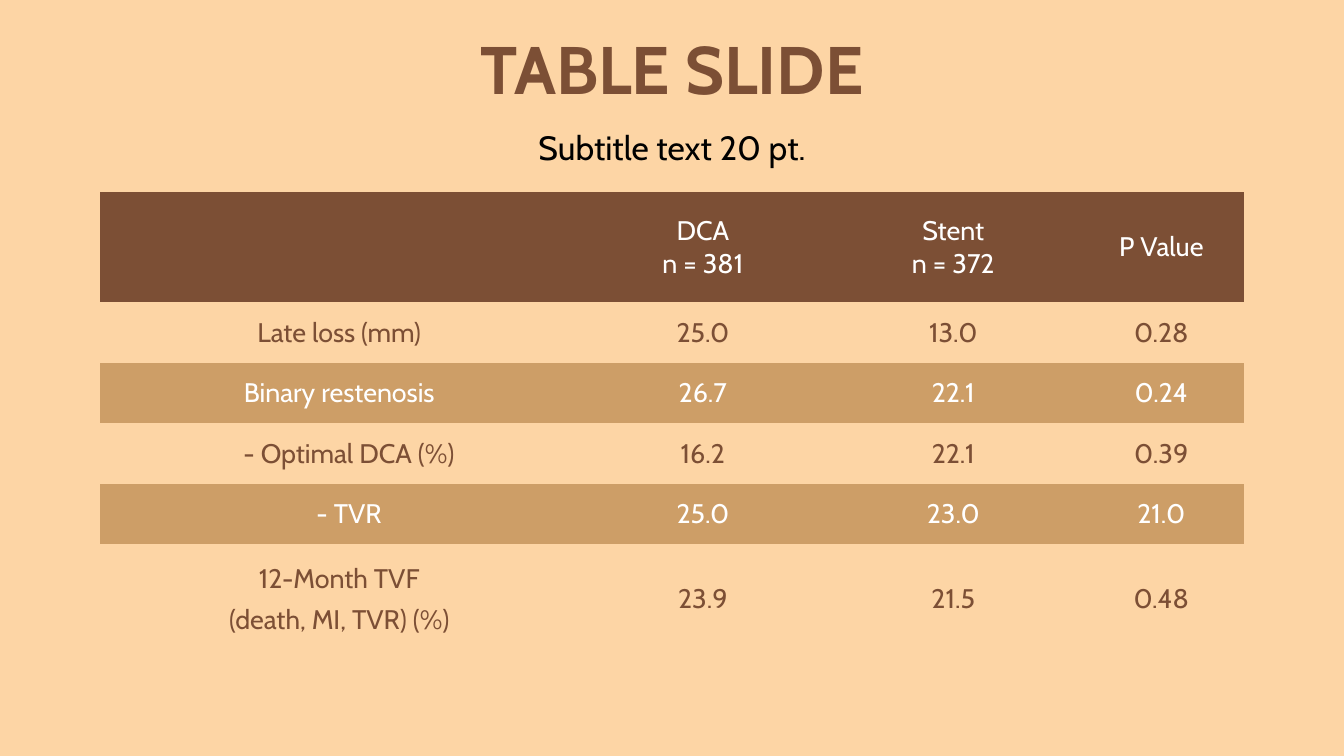
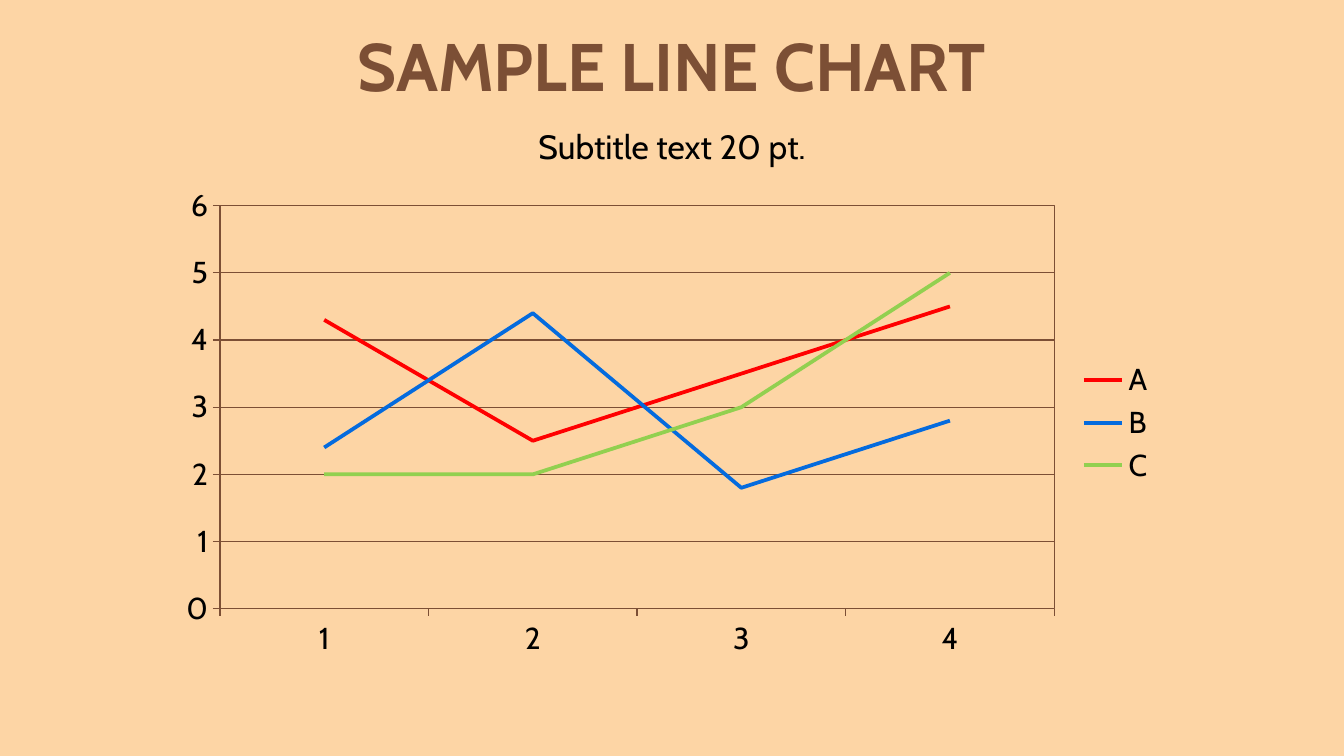
"""Builds a table slide and a line chart slide that share one warm brown style."""
from lxml import etree
from pptx import Presentation
from pptx.chart.data import CategoryChartData
from pptx.dml.color import RGBColor
from pptx.enum.chart import XL_CHART_TYPE as ChartType, XL_LEGEND_POSITION as LegendPosition
from pptx.enum.chart import XL_MARKER_STYLE as Marker, XL_TICK_MARK as Tick
from pptx.enum.text import MSO_ANCHOR as Anchor, PP_ALIGN as Align
from pptx.oxml import parse_xml
from pptx.oxml.ns import nsdecls, qn
from pptx.util import Inches, Pt

FONT = "Cabin"
SAND = RGBColor(0xFD, 0xD5, 0xA5)
BROWN = RGBColor(0x7C, 0x4F, 0x35)
TAN = RGBColor(0xCD, 0x9E, 0x67)
BLACK = RGBColor(0, 0, 0)
WHITE = RGBColor(0xFF, 0xFF, 0xFF)
RED = RGBColor(0xFF, 0, 0)
BLUE = RGBColor(0x04, 0x6B, 0xDE)
GREEN = RGBColor(0x92, 0xD0, 0x50)

SUBTITLE = "Subtitle text 20 pt."
HEADER = ("", "DCA\vn = 381", "Stent\vn = 372", "P Value")
ROWS = [
    ("Late loss (mm)", "25.0", "13.0", "0.28"),
    ("Binary restenosis", "26.7", "22.1", "0.24"),
    ("- Optimal DCA (%)", "16.2", "22.1", "0.39"),
    ("- TVR", "25.0", "23.0", "21.0"),
    ("12-Month TVF\n(death, MI, TVR) (%)", "23.9", "21.5", "0.48"),
]
COLUMN_WIDTHS = (3.95, 2.06, 2.08, 1.36)
ROW_HEIGHT, TALL_ROW_HEIGHT = 0.5, 0.91
NO_STYLE = "{2D5ABB26-0587-4C30-8999-92F81FD0307C}"

CATEGORIES = ("1", "2", "3", "4")
SERIES = [
    ("A", (4.3, 2.5, 3.5, 4.5), RED),
    ("B", (2.4, 4.4, 1.8, 2.8), BLUE),
    ("C", (2, 2, 3, 5), GREEN),
]
PLOT_LAYOUT = {"x": 0.053, "y": 0.057, "w": 0.834, "h": 0.823}


def style_font(font, size, color, bold=False):
    font.name, font.size, font.bold = FONT, Pt(size), bold
    font.color.rgb = color


def style_text(frame, size, color, bold=False, line_spacing=None, gap=0):
    for index, para in enumerate(frame.paragraphs):
        para.alignment = Align.CENTER
        para.line_spacing = line_spacing
        if index:
            para.space_before = Pt(gap)
        style_font(para.font, size, color, bold)
        for span in para.runs:
            style_font(span.font, size, color, bold)


def place(shape, left, top, width, height):
    shape.left, shape.top = Inches(left), Inches(top)
    shape.width, shape.height = Inches(width), Inches(height)


def add_titled_slide(deck, title, title_box, subtitle_box):
    slide = deck.slides.add_slide(deck.slide_layouts[5])
    heading = slide.shapes.title
    place(heading, *title_box)
    frame = heading.text_frame
    frame.text = title
    frame.margin_left = frame.margin_right = Inches(0.05)
    frame.vertical_anchor = Anchor.MIDDLE
    style_text(frame, 40, BROWN, True, 0.9)

    subtitle = slide.shapes.add_textbox(*map(Inches, subtitle_box))
    frame = subtitle.text_frame
    frame.word_wrap = True
    frame.text = SUBTITLE
    frame.vertical_anchor = Anchor.MIDDLE
    style_text(frame, 20, BLACK, line_spacing=0.9)
    return slide


def fill_cell(cell, text, fill, color):
    cell.text_frame.text = text
    cell.vertical_anchor = Anchor.MIDDLE
    if text.startswith("- "):
        cell.margin_left = Inches(0.26)
    if fill is None:
        cell.fill.background()
    else:
        cell.fill.solid()
        cell.fill.fore_color.rgb = fill
    style_text(cell.text_frame, 16, color, gap=4.8)


def add_results_table(slide):
    rows = [HEADER, *ROWS]
    heights = [TALL_ROW_HEIGHT, *[ROW_HEIGHT] * (len(rows) - 2), TALL_ROW_HEIGHT]
    frame = slide.shapes.add_table(
        len(rows), len(HEADER), Inches(0.83), Inches(1.59),
        Inches(sum(COLUMN_WIDTHS)), Inches(sum(heights)))
    table = frame.table
    table._tbl.tblPr.find(qn("a:tableStyleId")).text = NO_STYLE
    for column, width in zip(table.columns, COLUMN_WIDTHS):
        column.width = Inches(width)
    for index, (values, height) in enumerate(zip(rows, heights)):
        table.rows[index].height = Inches(height)
        if index == 0:
            fill, color = BROWN, WHITE
        elif index % 2:
            fill, color = None, BROWN
        else:
            fill, color = TAN, WHITE
        for cell, text in zip(table.rows[index].cells, values):
            fill_cell(cell, text, fill, color)


def style_line(line, color, width):
    line.color.rgb = color
    line.width = Pt(width)


def frame_plot_area(chart):
    plot_area = chart._chartSpace.find(f".//{qn('c:plotArea')}")
    for old in plot_area.findall(qn("c:layout")):
        plot_area.remove(old)
    layout = parse_xml(f"<c:layout {nsdecls('c')}><c:manualLayout/></c:layout>")
    settings = {"layoutTarget": "inner", "xMode": "edge", "yMode": "edge", **PLOT_LAYOUT}
    for name, value in settings.items():
        etree.SubElement(layout[0], qn(f"c:{name}")).set("val", str(value))
    plot_area.insert(0, layout)
    plot_area.append(parse_xml(
        f"<c:spPr {nsdecls('c', 'a')}><a:noFill/><a:ln w=\"{Pt(0.75)}\"><a:solidFill>"
        f"<a:srgbClr val=\"{BROWN}\"/></a:solidFill></a:ln></c:spPr>"))


def add_line_chart(slide):
    data = CategoryChartData()
    data.categories = CATEGORIES
    for name, values, _ in SERIES:
        data.add_series(name, values)
    chart = slide.shapes.add_chart(
        ChartType.LINE, Inches(1.38), Inches(1.47), Inches(8.27), Inches(4.05), data).chart
    style_font(chart.font, 18, BLACK)
    chart.has_title = False
    chart.has_legend = True
    chart.legend.position = LegendPosition.RIGHT
    chart.legend.include_in_layout = False
    style_font(chart.legend.font, 18, BLACK)

    for axis in (chart.category_axis, chart.value_axis):
        axis.major_tick_mark = Tick.OUTSIDE
        axis.minor_tick_mark = Tick.NONE
        style_font(axis.tick_labels.font, 18, BLACK)
        style_line(axis.format.line, BROWN, 0.75)
    scale = chart.value_axis
    scale.minimum_scale, scale.maximum_scale, scale.major_unit = 0, 6, 1
    scale.has_major_gridlines = True
    style_line(scale.major_gridlines.format.line, BROWN, 0.75)

    chart.plots[0].vary_by_categories = False
    for series, (_, _, color) in zip(chart.plots[0].series, SERIES):
        series.smooth = False
        series.marker.style = Marker.NONE
        style_line(series.format.line, color, 2.25)
    frame_plot_area(chart)


def main():
    deck = Presentation()
    deck.slide_width, deck.slide_height = Inches(11.11), Inches(6.25)
    background = deck.slide_master.background.fill
    background.solid()
    background.fore_color.rgb = SAND

    add_results_table(add_titled_slide(
        deck, "TABLE SLIDE", (0.83, 0.21, 9.45, 0.79), (0.83, 1.08, 9.45, 0.31)))
    add_line_chart(add_titled_slide(
        deck, "SAMPLE LINE CHART", (0.3, 0.17, 10.5, 0.82), (0.83, 1.01, 9.45, 0.43)))
    deck.save("out.pptx")


if __name__ == "__main__":
    main()
